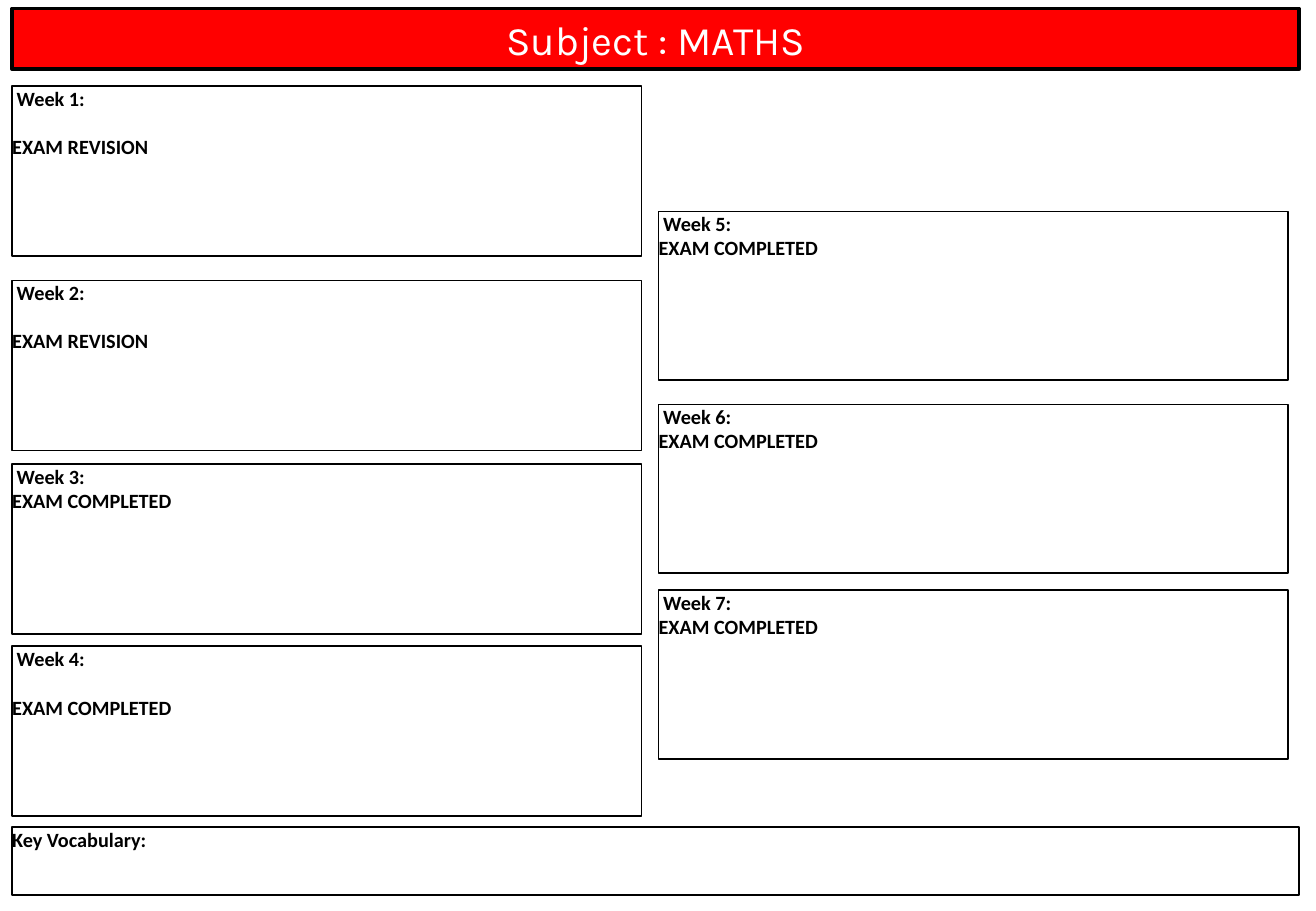
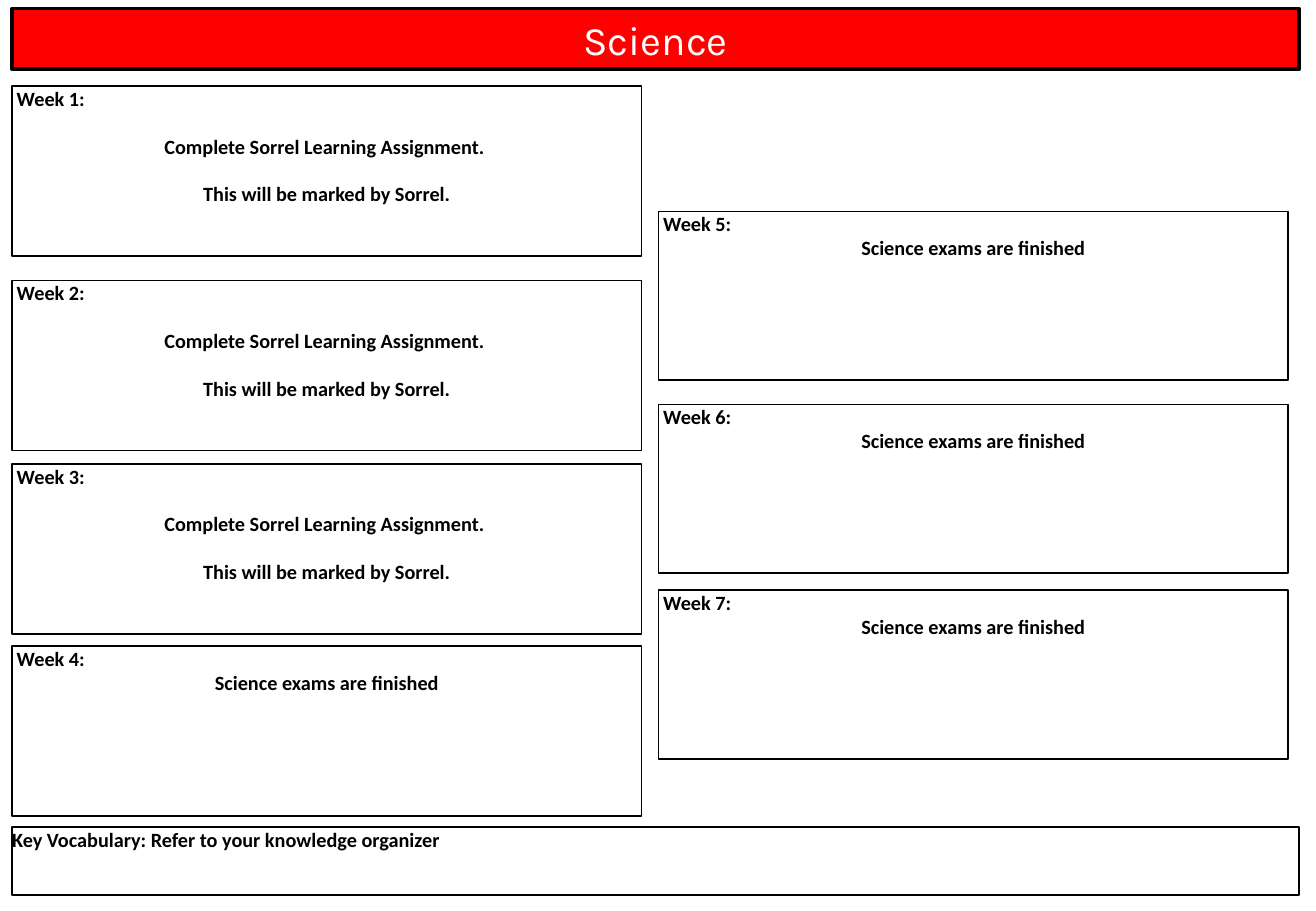
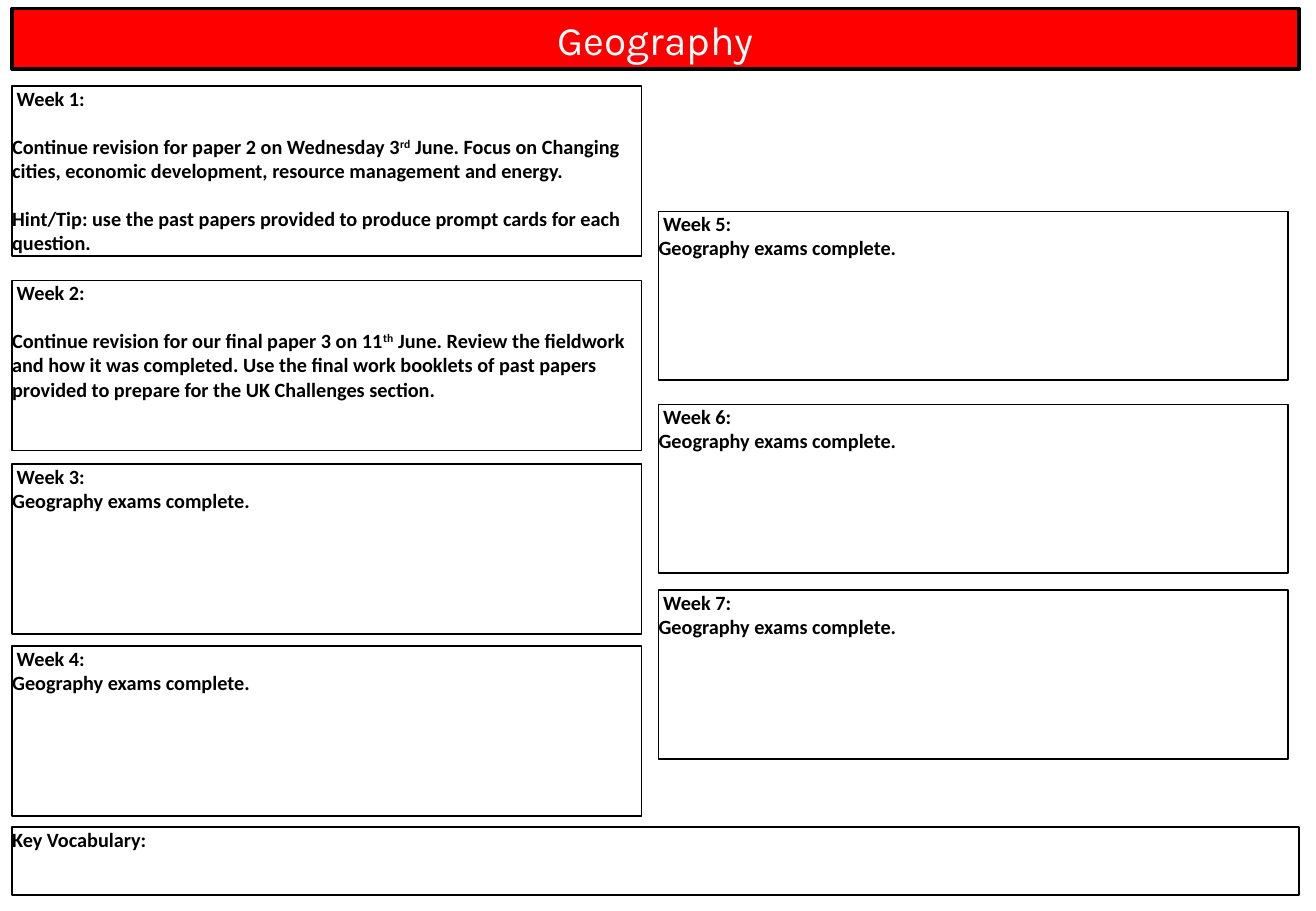
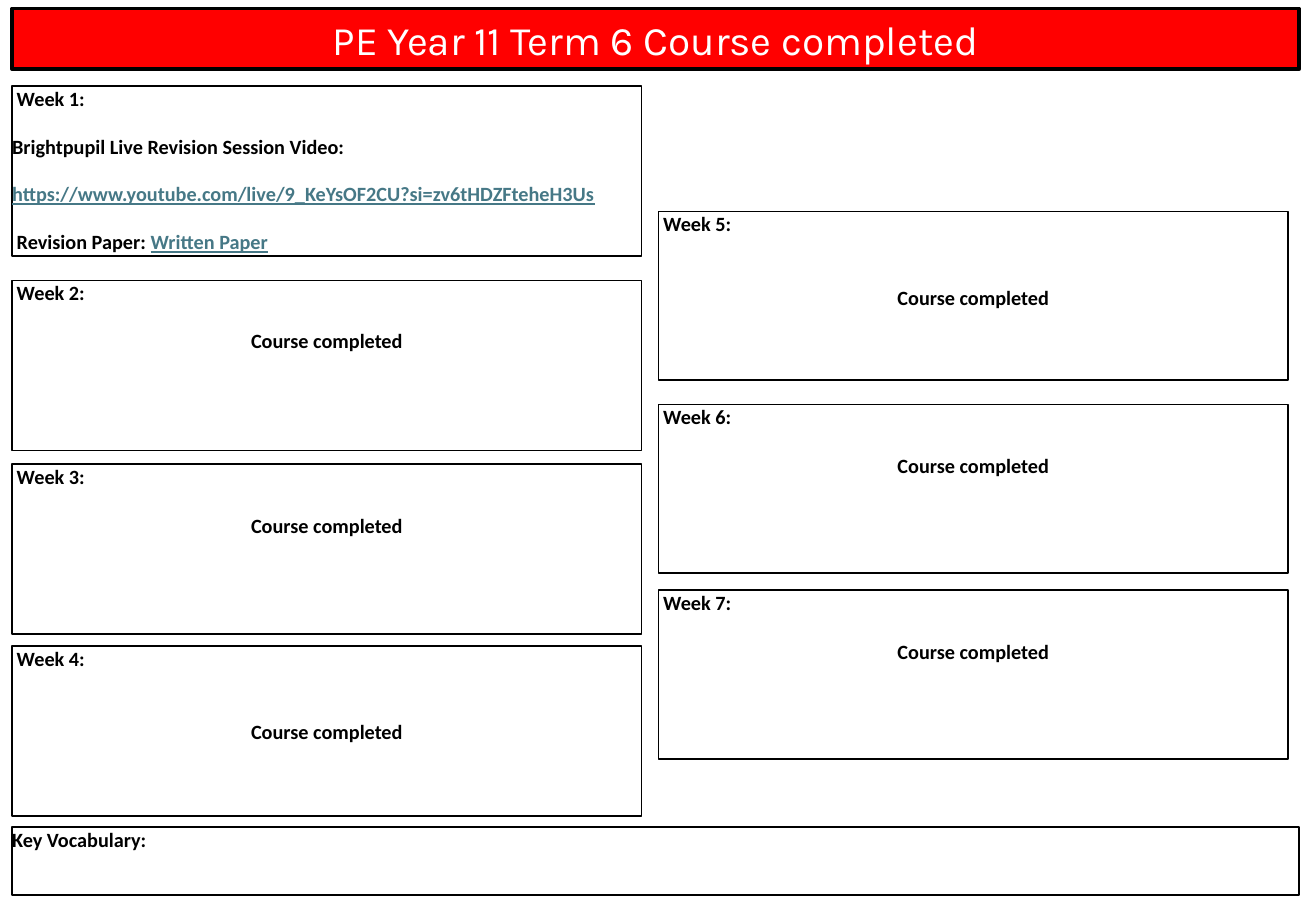
from dataclasses import dataclass

import pptx
import pptx.dml.color
import pptx.enum.shapes
import pptx.enum.text
import pptx.util

Inches = pptx.util.Inches
Pt = pptx.util.Pt
Align = pptx.enum.text.PP_ALIGN
Anchor = pptx.enum.text.MSO_ANCHOR

BLACK, WHITE, RED, LINK = "000000", "FFFFFF", "FF0000", "467886"
TITLE_FONT, BODY_FONT = "Karla", "Calibri"
EDGE, FULL, HALF = 0.1, 10.59, 5.18
RIGHT = 5.42
GAP, LINE = 13.9, 14.6  # points: paragraph gap, height of one text line


@dataclass(frozen=True)
class Box:
    left: float
    top: float
    width: float
    height: float


@dataclass(frozen=True)
class Piece:
    text: str
    raised: bool = False
    link: bool = False


@dataclass(frozen=True)
class Para:
    pieces: tuple[Piece, ...]
    gap: float = 0
    align: Align = Align.LEFT


@dataclass(frozen=True)
class Page:
    title: str
    weeks: tuple[tuple[Para, ...], ...]
    words: str = "Key Vocabulary:"


BAND = Box(EDGE, 0.07, FULL, 0.5)
FOOT = Box(EDGE, 6.81, FULL, 0.56)
WEEKS = [Box(EDGE, top, HALF, 1.4) for top in (0.71, 2.31, 3.82, 5.32)]
WEEKS += [Box(RIGHT, top, HALF, 1.39) for top in (1.74, 3.33, 4.86)]


def plain(text: str, gap: float = 0, align: Align = Align.LEFT) -> Para:
    return Para((Piece(text),), gap, align)


def mid(text: str, gap: float = 0) -> Para:
    return plain(text, gap, Align.CENTER)


def paint(code: str) -> pptx.dml.color.RGBColor:
    return pptx.dml.color.RGBColor.from_string(code)


def place(shape, box: Box) -> None:
    shape.left, shape.top = Inches(box.left), Inches(box.top)
    shape.width, shape.height = Inches(box.width), Inches(box.height)


def outline(shape, width: float) -> None:
    shape.line.color.rgb = paint(BLACK)
    shape.line.width = Pt(width)


def style(run, font: str, size: float, code: str, bold: bool) -> None:
    run.font.name, run.font.size, run.font.bold = font, Pt(size), bold
    run.font.color.rgb = paint(code)


def add_title(slide, text: str) -> None:
    title = slide.shapes.title
    place(title, BAND)
    title.fill.solid()
    title.fill.fore_color.rgb = paint(RED)
    outline(title, 2.25)
    frame = title.text_frame
    frame.text = text
    frame.auto_size = pptx.enum.text.MSO_AUTO_SIZE.NONE
    frame.vertical_anchor = Anchor.MIDDLE
    frame.paragraphs[0].alignment = Align.CENTER
    style(frame.paragraphs[0].runs[0], TITLE_FONT, 24, WHITE, False)


def add_panel(slide, box: Box, paras: tuple[Para, ...]) -> None:
    kind = pptx.enum.shapes.MSO_SHAPE.RECTANGLE
    panel = slide.shapes.add_shape(kind, 0, 0, 0, 0)
    place(panel, box)
    panel.shadow.inherit = False
    panel.fill.background()
    outline(panel, 1)
    frame = panel.text_frame
    frame.word_wrap = True
    frame.vertical_anchor = Anchor.TOP
    frame.margin_left = frame.margin_right = 0
    frame.margin_top = frame.margin_bottom = 0
    for index, para in enumerate(paras):
        line = frame.add_paragraph() if index else frame.paragraphs[0]
        line.alignment = para.align
        if para.gap:
            line.space_before = Pt(para.gap)
        for piece in para.pieces:
            run = line.add_run()
            run.text = piece.text
            style(run, BODY_FONT, 12, LINK if piece.link else BLACK, True)
            if piece.link:
                run.font.underline = True
            if piece.raised:
                run._r.get_or_add_rPr().set("baseline", "30000")


def add_page(deck, page: Page) -> None:
    slide = deck.slides.add_slide(deck.slide_layouts[5])
    add_title(slide, page.title)
    for count, (box, paras) in enumerate(zip(WEEKS, page.weeks), 1):
        add_panel(slide, box, (plain(f" Week {count}:"), *paras))
    add_panel(slide, FOOT, (plain(page.words),))


REVISE = (plain("EXAM REVISION", GAP),)
EXAM = (plain("EXAM COMPLETED"),)
MATHS = Page(
    "Subject : MATHS",
    (REVISE, REVISE, EXAM, (plain("EXAM COMPLETED", LINE),), EXAM, EXAM, EXAM),
)

TASK = (
    mid("Complete Sorrel Learning Assignment. ", GAP),
    mid("This will be marked by Sorrel.", GAP),
)
SCIENCE = Page(
    "Science",
    (TASK,) * 3 + ((mid("Science exams are finished"),),) * 4,
    "Key Vocabulary: Refer to your knowledge organizer",
)

CITIES = (
    Para((
        Piece("Continue revision for paper 2 on Wednesday 3"),
        Piece("rd", raised=True),
        Piece(" June. Focus on Changing cities, economic development, "
              "resource management and energy."),
    ), GAP),
    plain("Hint/Tip: use the past papers provided to produce prompt cards "
          "for each question.", GAP),
)
FIELD = (
    Para((
        Piece("Continue revision for our final paper 3 on 11"),
        Piece("th", raised=True),
        Piece(" June. Review the fieldwork and how it was completed. Use the "
              "final work booklets of past papers provided to prepare for "
              "the UK Challenges section."),
    ), GAP),
)
GEO = Page(
    "Geography",
    (CITIES, FIELD) + ((plain("Geography exams complete."),),) * 5,
)

VIDEO = (
    plain("Brightpupil Live Revision Session Video:", GAP),
    Para((Piece("https://www.youtube.com/live/9_KeYsOF2CU?si=zv6tHDZFteheH3Us",
                link=True),), GAP),
    Para((Piece(" Revision Paper: "), Piece("Written Paper", link=True)), GAP),
)
SPORT = Page(
    "PE Year 11 Term 6 Course completed",
    (VIDEO,) + tuple(
        (mid("Course completed", gap),)
        for gap in (GAP, LINE, 2 * LINE, 2 * LINE, LINE, LINE)
    ),
)


def main() -> None:
    deck = pptx.Presentation()
    deck.slide_width, deck.slide_height = Inches(10.83), Inches(7.5)
    for page in (MATHS, SCIENCE, GEO, SPORT):
        add_page(deck, page)
    deck.save("out.pptx")


if __name__ == "__main__":
    main()
